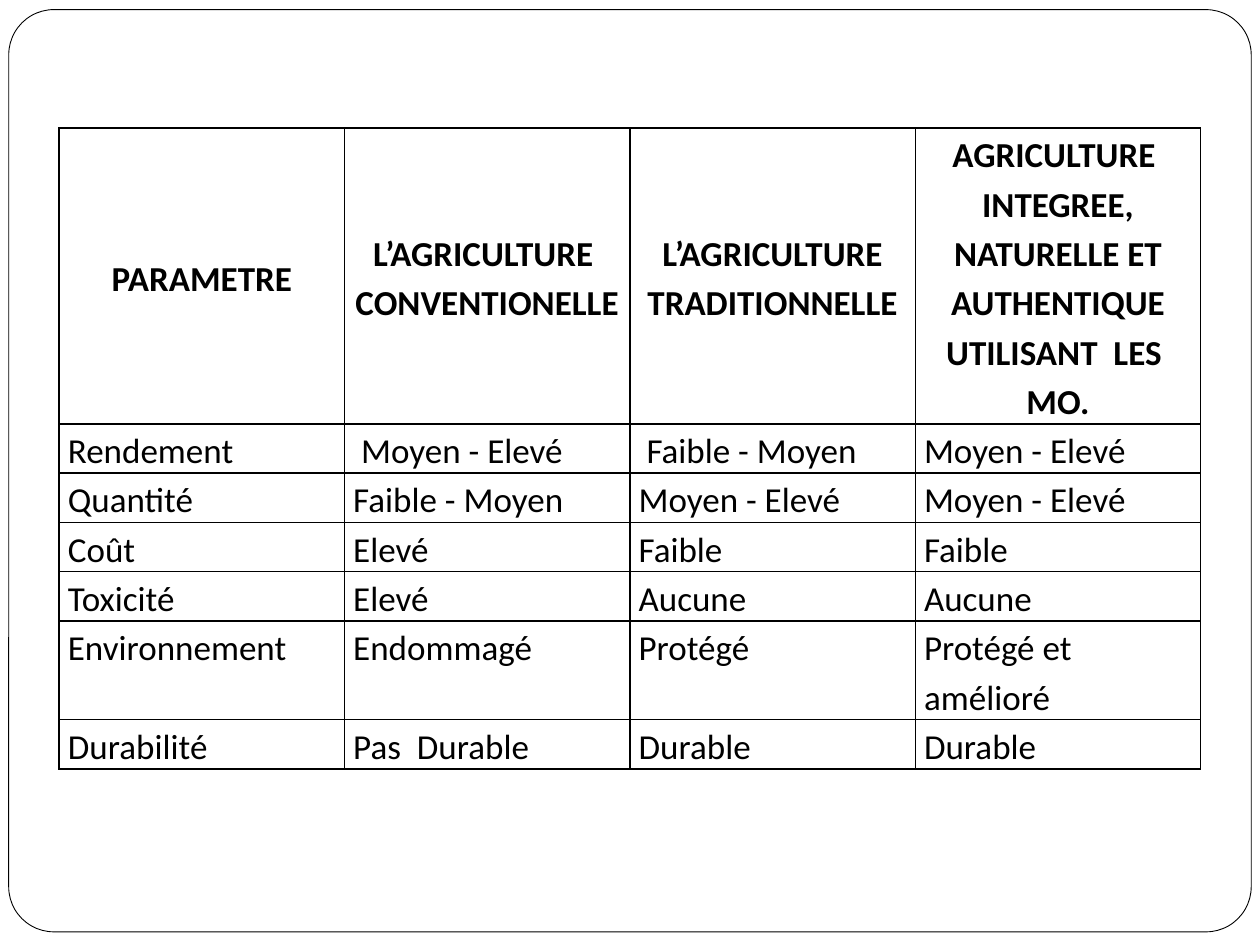
from lxml.etree import SubElement
from pptx import Presentation
from pptx.dml.color import RGBColor
from pptx.enum.shapes import MSO_SHAPE as SHAPE
from pptx.enum.text import MSO_ANCHOR as ANCHOR, PP_ALIGN as ALIGN
from pptx.oxml.ns import qn
from pptx.util import Pt


def rgb(hex_color):
    return RGBColor.from_string(hex_color)


def write(cell, text, bold=False, align=ALIGN.LEFT, anchor=ANCHOR.TOP, indent=0):
    cell.margin_left, cell.margin_right = Pt(5 + indent), Pt(5)
    cell.margin_top = cell.margin_bottom = 0
    cell.vertical_anchor = anchor
    tf = cell.text_frame
    tf.text = text
    for p in tf.paragraphs:
        p.alignment, p.line_spacing = align, 1.15
        for r in p.runs:
            r.font.name, r.font.size, r.font.bold = "Calibri", Pt(20), bold
            r.font.color.rgb = rgb("000000")


prs = Presentation()
prs.slide_width, prs.slide_height = Pt(720), Pt(540)
s = prs.slides.add_slide(prs.slide_layouts[6])

# Rounded page frame
frame = s.shapes.add_shape(SHAPE.ROUNDED_RECTANGLE, Pt(5), Pt(5.5), Pt(710), Pt(527))
frame.adjustments[0] = 0.049
frame.shadow.inherit = False
frame.fill.solid()
frame.fill.fore_color.rgb = rgb("FFFFFF")
frame.line.color.rgb = rgb("000000")
frame.line.width = Pt(0.5)

# Comparison of farming methods
headers = ["PARAMETRE", "L’AGRICULTURE  CONVENTIONELLE", "L’AGRICULTURE TRADITIONNELLE",
           "AGRICULTURE  INTEGREE, NATURELLE ET AUTHENTIQUE\nUTILISANT  LES  MO."]
rows = [
    ["Rendement", "Moyen - Elevé", "Faible - Moyen", "Moyen - Elevé"],
    ["Quantité", "Faible - Moyen", "Moyen - Elevé", "Moyen - Elevé"],
    ["Coût", "Elevé", "Faible", "Faible"],
    ["Toxicité", "Elevé", "Aucune", "Aucune"],
    ["Environnement", "Endommagé", "Protégé", "Protégé et amélioré"],
    ["Durabilité", "Pas  Durable", "Durable", "Durable"],
]
heights = [169, 28.2, 28.2, 28.2, 28.2, 56.4, 28.2]
table = s.shapes.add_table(len(heights), len(headers), Pt(33.8), Pt(73.2),
                           Pt(652.4), Pt(sum(heights))).table
table.first_row = table.horz_banding = False
for row, height in zip(table.rows, heights):
    row.height = Pt(height)
for col in table.columns:
    col.width = Pt(163.1)

for c, header in enumerate(headers):
    write(table.cell(0, c), header, bold=True, align=ALIGN.CENTER, anchor=ANCHOR.MIDDLE)
for i, row in enumerate(rows, 1):
    for c, text in enumerate(row):
        # The two middle yield values are slightly indented
        write(table.cell(i, c), text, indent=4.5 if i == 1 and c in (1, 2) else 0)

# Black cell borders, then no fill
for cell in table.iter_cells():
    tcPr = cell._tc.get_or_add_tcPr()
    for side in ("a:lnL", "a:lnR", "a:lnT", "a:lnB"):
        ln = SubElement(tcPr, qn(side), w=str(Pt(1)))
        SubElement(SubElement(ln, qn("a:solidFill")), qn("a:srgbClr"), val="000000")
    cell.fill.background()

prs.save("out.pptx")
